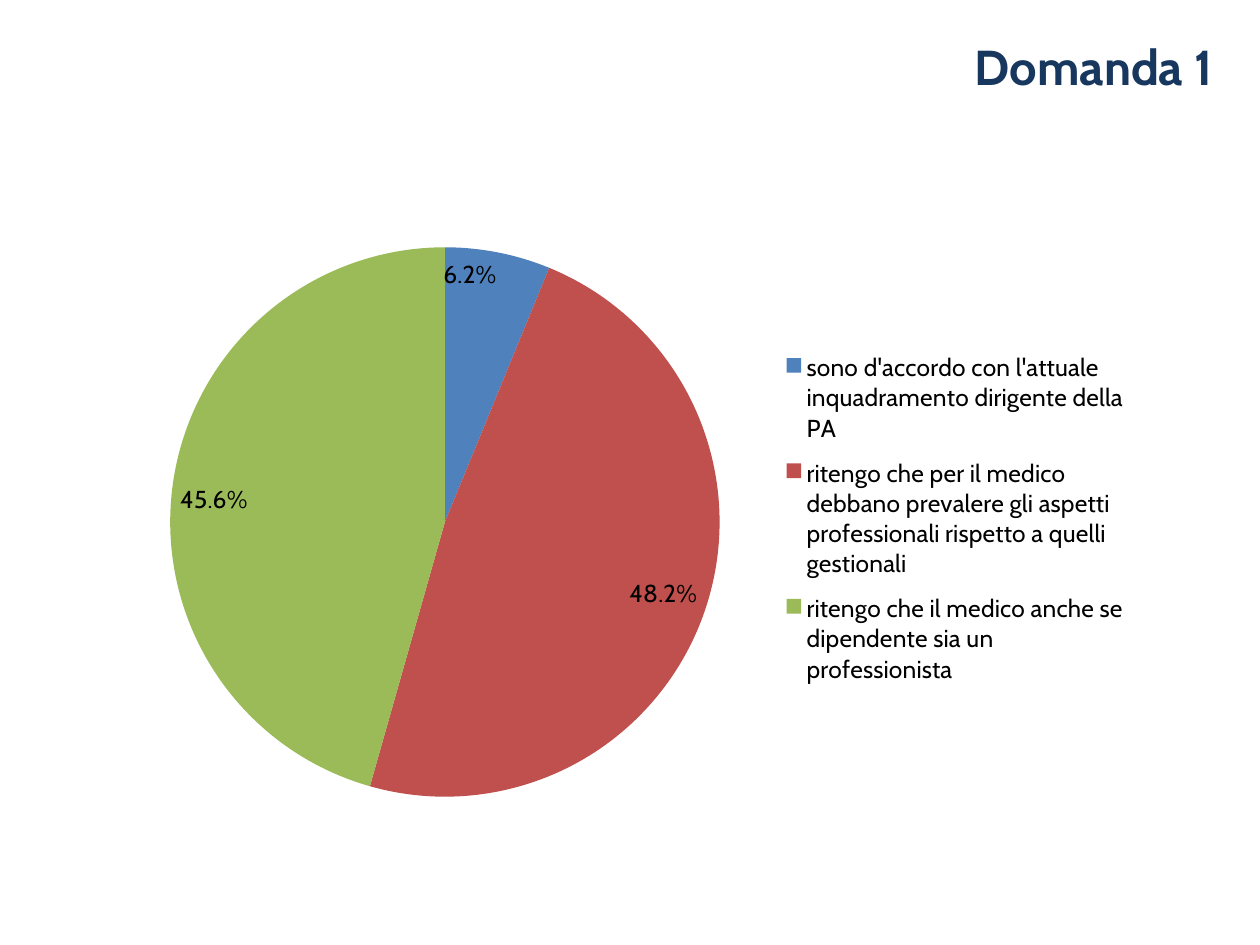
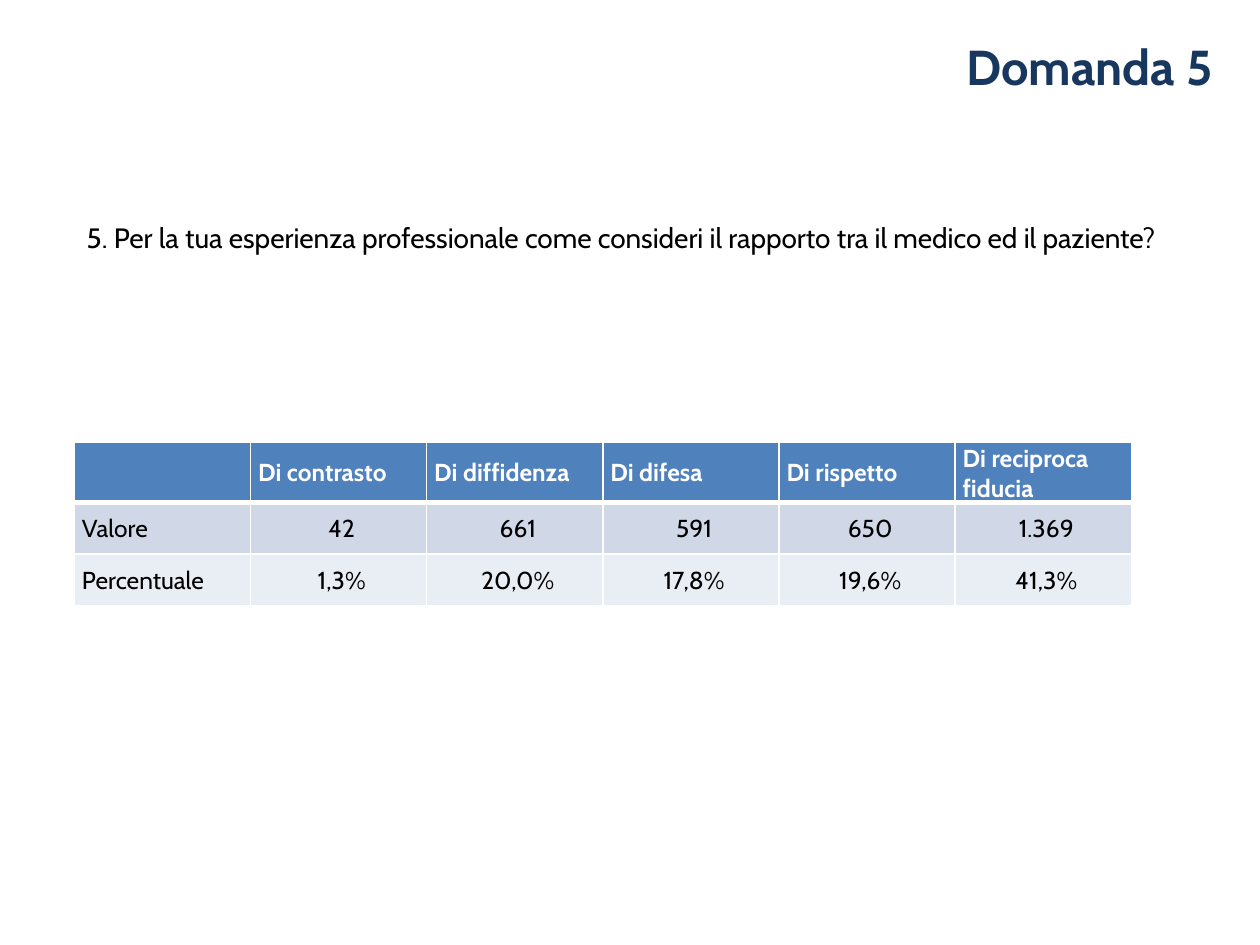
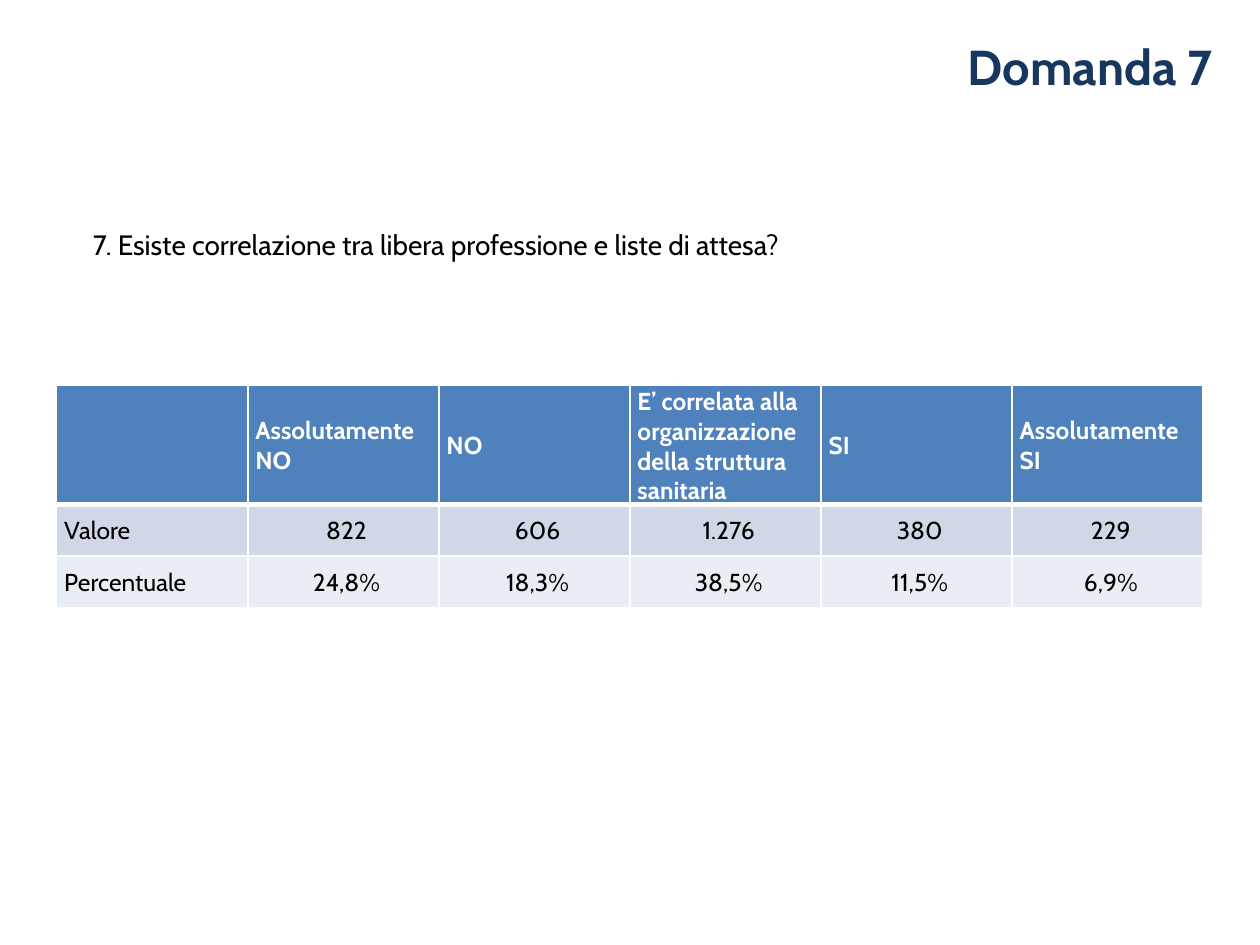
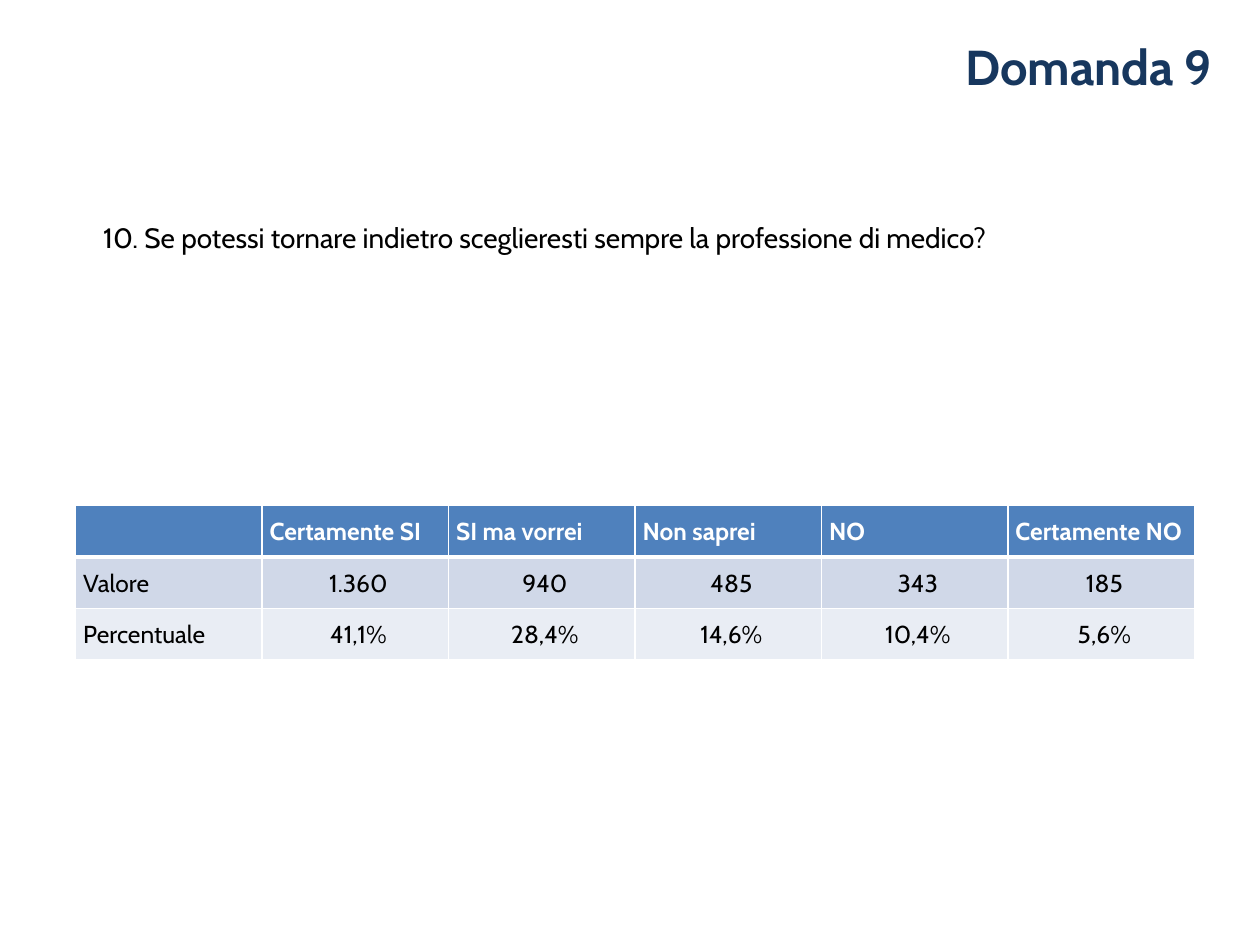
from lxml import etree
from pptx import Presentation
from pptx.chart.data import CategoryChartData
from pptx.dml.color import RGBColor
from pptx.enum import chart as chart_enum, text as text_enum
from pptx.oxml.ns import qn
from pptx.util import Inches, Pt

FONT = "Cabin"
NAVY, BLACK, WHITE = "17375E", "000000", "FFFFFF"
BLUE, RED, GREEN = "4F81BD", "C0504D", "9BBB59"
ROW_FILLS = (BLUE, "D0D8E8", "E9EDF4")
ROW_HEIGHT = 0.41
TITLE_BOX = (0.59, 0.21, 9.13, 0.62)

LEFT = text_enum.PP_ALIGN.LEFT
CENTER = text_enum.PP_ALIGN.CENTER
RIGHT = text_enum.PP_ALIGN.RIGHT
MIDDLE = text_enum.MSO_ANCHOR.MIDDLE

ANSWERS = {
    "sono d'accordo con l'attuale inquadramento dirigente della PA": 0.062,
    "ritengo che per il medico debbano prevalere gli aspetti professionali "
    "rispetto a quelli gestionali": 0.482,
    "ritengo che il medico anche se dipendente sia un professionista": 0.456,
}

TABLE_SLIDES = [
    {
        "title": "Domanda 5",
        "question": "5. Per la tua esperienza professionale come consideri il "
                    "rapporto tra il medico ed il paziente?",
        "question_box": (0.59, 1.7, 9.13, 0.37),
        "table_box": (0.59, 3.51, 8.39),
        "header_height": 0.47,
        "rows": [
            ("", "Di contrasto", "Di diffidenza", "Di difesa", "Di rispetto",
             "Di reciproca fiducia"),
            ("Valore", "42", "661", "591", "650", "1.369"),
            ("Percentuale", "1,3%", "20,0%", "17,8%", "19,6%", "41,3%"),
        ],
    },
    {
        "title": "Domanda 7",
        "question": " 7. Esiste correlazione tra libera professione e liste di attesa?",
        "question_box": (0.59, 1.76, 9.1, 0.37),
        "table_box": (0.45, 3.06, 9.1),
        "header_height": 0.93,
        "rows": [
            ("", "Assolutamente NO", "NO",
             "E’ correlata alla organizzazione della struttura sanitaria", "SI",
             "Assolutamente SI"),
            ("Valore", "822", "606", "1.276", "380", "229"),
            ("Percentuale", "24,8%", "18,3%", "38,5%", "11,5%", "6,9%"),
        ],
    },
    {
        "title": "Domanda 9",
        "question": "10. Se potessi tornare indietro sceglieresti sempre la "
                    "professione di medico?",
        "question_box": (0.72, 1.7, 8.88, 0.37),
        "table_box": (0.6, 4.01, 8.88),
        "header_height": ROW_HEIGHT,
        "rows": [
            ("", "Certamente SI", "SI ma vorrei", "Non saprei", "NO", "Certamente NO"),
            ("Valore", "1.360", "940", "485", "343", "185"),
            ("Percentuale", "41,1%", "28,4%", "14,6%", "10,4%", "5,6%"),
        ],
    },
]


def rgb(color):
    return RGBColor.from_string(color)


def format_font(font, size, color, bold=False):
    font.name = FONT
    font.size = Pt(size)
    font.bold = bold
    font.color.rgb = rgb(color)


def write_text(frame, text, size=14, color=BLACK, bold=False, align=LEFT):
    paragraph = frame.paragraphs[0]
    paragraph.alignment = align
    if text:
        paragraph.add_run().text = text
        format_font(paragraph.runs[0].font, size, color, bold)
    else:
        format_font(paragraph.font, size, color, bold)


def add_text_box(slide, box, text, **text_format):
    frame = slide.shapes.add_textbox(*map(Inches, box)).text_frame
    frame.word_wrap = True
    write_text(frame, text, **text_format)
    return frame


def add_titled_slide(presentation, title):
    slide = presentation.slides.add_slide(presentation.slide_layouts[6])
    frame = add_text_box(slide, TITLE_BOX, title, size=28, color=NAVY, bold=True, align=RIGHT)
    frame.vertical_anchor = MIDDLE
    return slide


def add_question(slide, box, question):
    frame = add_text_box(slide, box, question, size=16)
    frame.auto_size = text_enum.MSO_AUTO_SIZE.SHAPE_TO_FIT_TEXT


def set_cell_borders(cell, bottom_width, top_width):
    """Draw white borders; they must come before the fill in the cell properties."""
    properties = cell._tc.get_or_add_tcPr()
    widths = {"a:lnL": 1, "a:lnR": 1, "a:lnT": top_width, "a:lnB": bottom_width}
    for index, (tag, width) in enumerate(widths.items()):
        line = etree.Element(qn(tag), w=str(Pt(width)))
        fill = etree.SubElement(line, qn("a:solidFill"))
        etree.SubElement(fill, qn("a:srgbClr"), val=WHITE)
        properties.insert(index, line)


def add_answer_table(slide, box, rows, header_height):
    left, top, width = box
    column_count = len(rows[0])
    height = header_height + ROW_HEIGHT * (len(rows) - 1)
    table = slide.shapes.add_table(
        len(rows), column_count, *map(Inches, (left, top, width, height))).table
    for column in table.columns:
        column.width = Inches(width / column_count)
    for row_index, values in enumerate(rows):
        is_header = row_index == 0
        table.rows[row_index].height = Inches(header_height if is_header else ROW_HEIGHT)
        for column_index, value in enumerate(values):
            cell = table.cell(row_index, column_index)
            cell.margin_left = Inches(0.06)
            cell.margin_top = cell.margin_right = Inches(0.01)
            cell.margin_bottom = 0
            cell.vertical_anchor = MIDDLE
            cell.fill.solid()
            cell.fill.fore_color.rgb = rgb(ROW_FILLS[row_index])
            set_cell_borders(cell, bottom_width=3 if is_header else 1,
                             top_width=3 if row_index == 1 else 1)
            write_text(cell.text_frame, value, bold=is_header,
                       color=WHITE if is_header else BLACK,
                       align=LEFT if is_header or column_index == 0 else CENTER)


def set_layout(element, index, x, y, w, h, inner=False):
    """Place a chart part by fractions of the chart area."""
    existing = element.find(qn("c:layout"))
    if existing is not None:
        element.remove(existing)
    layout = etree.Element(qn("c:layout"))
    manual = etree.SubElement(layout, qn("c:manualLayout"))
    if inner:
        etree.SubElement(manual, qn("c:layoutTarget"), val="inner")
    for tag in ("c:xMode", "c:yMode"):
        etree.SubElement(manual, qn(tag), val="edge")
    for tag, value in zip(("c:x", "c:y", "c:w", "c:h"), (x, y, w, h)):
        etree.SubElement(manual, qn(tag), val=str(value))
    element.insert(index, layout)


def add_answer_pie(slide, box, answers, colors):
    data = CategoryChartData(number_format="0.0%")
    data.categories = list(answers)
    data.add_series("Series 1", list(answers.values()))
    chart = slide.shapes.add_chart(
        chart_enum.XL_CHART_TYPE.PIE, *map(Inches, box), data).chart
    format_font(chart.font, 14, BLACK)
    chart.has_title = False

    chart.has_legend = True
    chart.legend.position = chart_enum.XL_LEGEND_POSITION.RIGHT
    chart.legend.include_in_layout = False
    set_layout(chart.legend._element, 1, x=0.63, y=0.23, w=0.32, h=0.58)

    plot = chart.plots[0]
    plot.vary_by_categories = True
    set_layout(chart._chartSpace.chart.plotArea, 0, x=0.09, y=0.08, w=0.49, h=0.89, inner=True)
    for index, color in enumerate(colors):
        fill = plot.series[0].points[index].format.fill
        fill.solid()
        fill.fore_color.rgb = rgb(color)

    plot.has_data_labels = True
    labels = plot.data_labels
    labels.show_value = True
    labels.show_percentage = False
    labels.number_format = "0.0%"
    labels.number_format_is_linked = False
    labels.position = chart_enum.XL_LABEL_POSITION.INSIDE_END
    format_font(labels.font, 14, BLACK)


def main():
    presentation = Presentation()
    presentation.slide_width = Inches(10)
    presentation.slide_height = Inches(7.5)

    slide = add_titled_slide(presentation, "Domanda 1")
    add_answer_pie(slide, (0.55, 1.55, 8.9, 4.94), ANSWERS, (BLUE, RED, GREEN))

    for content in TABLE_SLIDES:
        slide = add_titled_slide(presentation, content["title"])
        add_question(slide, content["question_box"], content["question"])
        add_answer_table(slide, content["table_box"], content["rows"], content["header_height"])

    presentation.save("out.pptx")


if __name__ == "__main__":
    main()
